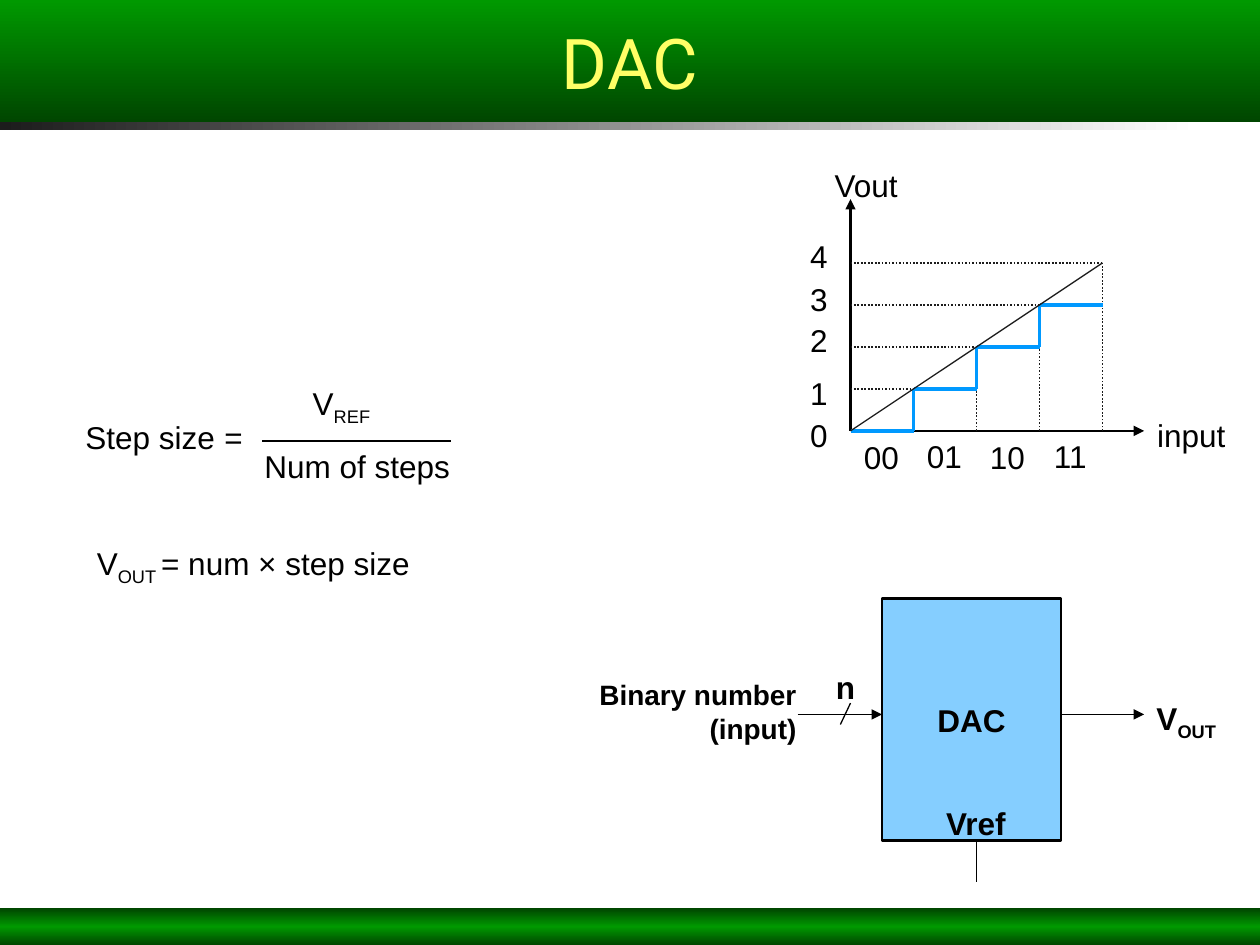
from copy import deepcopy

from lxml.etree import SubElement
from pptx import Presentation
from pptx.dml.color import RGBColor
from pptx.enum.dml import MSO_LINE
from pptx.enum.shapes import MSO_CONNECTOR, MSO_SHAPE
from pptx.enum.text import MSO_ANCHOR, PP_ALIGN
from pptx.oxml.ns import qn
from pptx.util import Inches, Pt

COLORS = {
    "black": "000000",
    "guide": "1C1C1C",
    "white": "FFFFFF",
    "step": "0099FF",
    "block": "85CEFF",
    "title": "FFFF66",
    "green": "009900",
    "dark_green": "004600",
}
LEFT, CENTER, RIGHT = PP_ALIGN.LEFT, PP_ALIGN.CENTER, PP_ALIGN.RIGHT
DOWN, ACROSS = 270, 0


def rgb(name):
    return RGBColor.from_string(COLORS[name])


def write(frame, parts, size=18, bold=False, align=CENTER, font="Arial", color="black"):
    """Fill a frame with (text, style) parts; style is "", "sub" or "italic"."""
    paragraph = frame.paragraphs[0]
    paragraph.alignment = align
    face = paragraph.font
    face.name, face.size, face.bold = font, Pt(size), bold
    face.color.rgb = rgb(color)
    for text, style in parts:
        run = paragraph.add_run()
        run.text = text
        if style == "sub":
            run._r.get_or_add_rPr().set("baseline", "-25000")
        elif style == "italic":
            run.font.italic = True


def add_label(slide, left, top, width, parts, height=0.4, **style):
    box = slide.shapes.add_textbox(Inches(left), Inches(top), Inches(width), Inches(height))
    box.text_frame.word_wrap = True
    if isinstance(parts, str):
        parts = [(parts, "")]
    write(box.text_frame, parts, **style)


def add_line(slide, start, end, color="black", width=0.75, dotted=False, arrow=False):
    line = slide.shapes.add_connector(
        MSO_CONNECTOR.STRAIGHT, *(Inches(v) for v in (*start, *end)))
    line.line.color.rgb = rgb(color)
    line.line.width = Pt(width)
    if dotted:
        line.line.dash_style = MSO_LINE.ROUND_DOT
    properties = line._element.spPr
    if arrow:
        SubElement(properties.find(qn("a:ln")), qn("a:tailEnd"), type="triangle")
    SubElement(properties, qn("a:effectLst"))


def add_rect(slide, left, top, width, height):
    rect = slide.shapes.add_shape(
        MSO_SHAPE.RECTANGLE, Inches(left), Inches(top), Inches(width), Inches(height))
    rect.shadow.inherit = False
    return rect


def add_band(slide, left, top, width, height, colors, angle):
    """Borderless bar with evenly spaced gradient colours."""
    band = add_rect(slide, left, top, width, height)
    band.line.fill.background()
    band.fill.gradient()
    band.fill.gradient_angle = angle
    stops = band._element.spPr.find(qn("a:gradFill")).find(qn("a:gsLst"))
    for _ in colors[2:]:
        stops.append(deepcopy(stops[0]))
    for i, (stop, color) in enumerate(zip(band.fill.gradient_stops, colors)):
        stop.color.rgb = rgb(color)
        stop.position = i / (len(colors) - 1)
    return band


def add_frame(slide, width, height):
    """Title bar, rule below it and footer bar."""
    footer = 0.29
    add_band(slide, 0, height - footer, width, footer,
             ["dark_green", "green", "dark_green"], DOWN)
    add_band(slide, 0, 0.97, 9.51, 0.06, ["guide", "white"], ACROSS)
    header = add_band(slide, 0, 0, width, 0.97, ["green", "dark_green"], DOWN)
    header.text_frame.vertical_anchor = MSO_ANCHOR.MIDDLE
    write(header.text_frame, [("DAC", "")], size=40, font="Roboto", color="title")


def add_staircase(slide, left, top):
    """Output voltage against input code."""
    steps, run, rise = 4, 0.5, 1 / 3
    x0, y0 = left + 0.5, top + 2.15

    def point(x, y):
        return x0 + x * run, y0 - y * rise

    add_line(slide, point(0, 0), (x0, top + 0.31), width=1.5, arrow=True)
    add_line(slide, point(0, 0), (x0 + 2.33, y0), width=1.5, arrow=True)
    for level in range(1, steps + 1):
        add_line(slide, point(0, level), point(level, level), "guide", 1, dotted=True)
        if level > 1:
            add_line(slide, point(level, 0), point(level, min(level, steps)),
                     "guide", 1, dotted=True)
    for level in range(steps):
        add_line(slide, point(level, level), point(level + 1, level), "step", 2.25)
        if level:
            add_line(slide, point(level, level - 1), point(level, level), "step", 2.25)
    add_line(slide, point(0, 0), point(steps, steps), "guide")

    for code in range(steps):
        add_label(slide, x0 - 0.17 + code * run, y0 + (0.0 if code % 2 else 0.01),
                  0.83, f"{code:02b}")
    for value, offset in enumerate([1.98, 1.65, 1.23, 0.9, 0.56]):
        add_label(slide, left, top + offset, 0.5, str(value))
    add_label(slide, x0 + 2.33, top + 1.98, 0.75, "input")
    add_label(slide, left + 0.25, top, 0.75, "Vout")


def add_block_diagram(slide, left, top, width, height):
    """Converter block with its input, output and reference."""
    right, bottom, wire = left + width, top + height, top + 0.92
    block = add_rect(slide, left, top, width, height)
    block.fill.solid()
    block.fill.fore_color.rgb = rgb("block")
    block.line.color.rgb = rgb("black")
    block.line.width = Pt(1.5)
    block.text_frame.vertical_anchor = MSO_ANCHOR.MIDDLE
    write(block.text_frame, [("DAC", "")], bold=True)

    add_line(slide, (left - 0.67, wire), (left, wire), arrow=True)
    add_line(slide, (left - 0.25, wire - 0.09), (left - 0.33, wire + 0.08))
    add_line(slide, (right, wire), (right + 0.66, wire), arrow=True)
    add_line(slide, (left + 0.75, bottom), (left + 0.75, bottom + 0.33))

    add_label(slide, left + 0.33, bottom - 0.34, 0.83, "Vref", bold=True)
    add_label(slide, right + 0.58, wire - 0.17, 0.83,
              [("V", ""), ("OUT", "sub")], bold=True)
    add_label(slide, left - 2.58, wire - 0.34, 2, "Binary number (input)",
              height=0.64, size=16, bold=True, align=RIGHT)
    add_label(slide, left - 0.75, wire - 0.42, 0.92, "n", bold=True)


def add_formulas(slide, left, top):
    bar = top + 0.5
    add_label(slide, left, top + 0.27, 1.58,
              [("Step size", ""), (" =", "italic")], align=LEFT)
    add_line(slide, (left + 1.5, bar), (left + 3, bar), width=1.5)
    add_label(slide, left + 1.59, top, 1.08, [("V", ""), ("REF", "sub")])
    add_label(slide, left + 1.42, bar, 1.75, "Num of steps", align=LEFT)
    add_label(slide, left + 0.09, top + 1.27, 3,
              [("V", ""), ("OUT ", "sub"), ("= num × step size", "")], align=LEFT)


def main():
    deck = Presentation()
    deck.slide_width, deck.slide_height = Inches(10), Inches(7.5)
    slide = deck.slides.add_slide(deck.slide_layouts[6])
    add_frame(slide, 10, 7.5)
    add_staircase(slide, 6.25, 1.27)
    add_block_diagram(slide, 7, 4.75, 1.42, 1.92)
    add_formulas(slide, 0.58, 3)
    deck.save("out.pptx")


if __name__ == "__main__":
    main()
